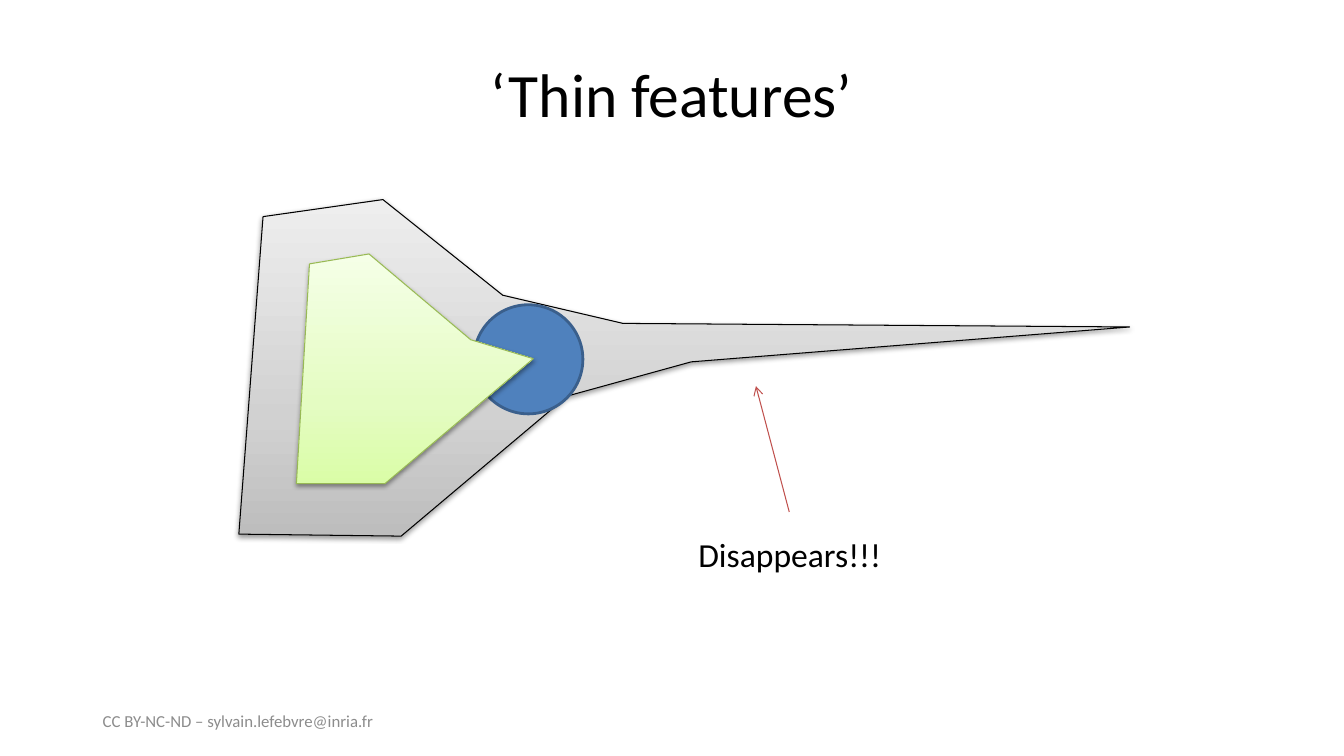
import pptx
import pptx.util
import pptx.dml.color
import pptx.enum.shapes
import pptx.enum.text
import pptx.oxml.ns
import lxml.etree

Cm = pptx.util.Cm
Pt = pptx.util.Pt
qn = pptx.oxml.ns.qn
ALIGN = pptx.enum.text.PP_ALIGN
ANCHOR = pptx.enum.text.MSO_ANCHOR

BODY = [(9.65, 5.03), (12.67, 7.44), (15.7, 8.15), (28.47, 8.24),
        (17.42, 9.12), (14.3, 9.98), (10.11, 13.51), (6.02, 13.46),
        (6.63, 5.46)]
CORE = [(9.3, 6.4), (7.8, 6.65), (7.47, 12.19), (9.7, 12.19),
        (13.44, 9.04), (11.86, 8.56)]


def color(code):
    return pptx.dml.color.RGBColor.from_string(code)


def add(node, tag, **attrs):
    return lxml.etree.SubElement(node, qn(tag), attrs)


def edge(shape, code, width):
    shape.line.color.rgb = color(code)
    shape.line.width = Pt(width)


def place(shape, left, top, width, height):
    shape.left, shape.top = Cm(left), Cm(top)
    shape.width, shape.height = Cm(width), Cm(height)


def write(shape, text, size, code, align, anchor):
    frame = shape.text_frame
    frame.text = text
    frame.vertical_anchor = anchor
    line = frame.paragraphs[0]
    line.alignment = align
    font = line.runs[0].font
    font.name = "Calibri"
    font.size = Pt(size)
    font.color.rgb = color(code)


def label(slide, text, box, size, code, anchor, wrap):
    shape = slide.shapes.add_textbox(*map(Cm, box))
    write(shape, text, size, code, ALIGN.LEFT, anchor)
    shape.text_frame.word_wrap = wrap


def blend(shape, stops):
    shape.fill.gradient()
    shape.fill.gradient_angle = 90
    group = shape._element.spPr.find(qn("a:gradFill")).find(qn("a:gsLst"))
    for old in list(group):
        group.remove(old)
    for part, code in zip((0, 35, 100), stops):
        stop = add(group, "a:gs", pos=str(part * 1000))
        add(stop, "a:srgbClr", val=code)


def shade(shape):
    shape.shadow.inherit = False
    effect = shape._element.spPr.find(qn("a:effectLst"))
    outer = add(effect, "a:outerShdw", blurRad="40000", dist="20000",
                dir="5400000", rotWithShape="0")
    tint = add(outer, "a:srgbClr", val="000000")
    add(tint, "a:alpha", val="38000")


def outline(slide, points, stops, code):
    spots = [(Cm(x), Cm(y)) for x, y in points]
    pen = slide.shapes.build_freeform(*spots[0])
    pen.add_line_segments(spots[1:], close=True)
    shape = pen.convert_to_shape()
    blend(shape, stops)
    edge(shape, code, 0.75)
    shade(shape)


def disc(slide, left, top, size):
    oval = pptx.enum.shapes.MSO_SHAPE.OVAL
    shape = slide.shapes.add_shape(oval, Cm(left), Cm(top), Cm(size), Cm(size))
    shape.shadow.inherit = False
    shape.fill.solid()
    shape.fill.fore_color.rgb = color("4F81BD")
    edge(shape, "3A5F8C", 2)


def arrow(slide, ends, code):
    kind = pptx.enum.shapes.MSO_CONNECTOR.STRAIGHT
    shape = slide.shapes.add_connector(kind, *map(Cm, ends))
    edge(shape, code, 0.75)
    add(shape.line._get_or_add_ln(), "a:tailEnd", type="arrow")
    add(shape._element.spPr, "a:effectLst")


def main():
    deck = pptx.Presentation()
    deck.slide_width, deck.slide_height = Cm(33.87), Cm(19.05)
    slide = deck.slides.add_slide(deck.slide_layouts[5])
    title = slide.shapes.title
    place(title, 1.69, 0.76, 30.48, 3.18)
    write(title, "‘Thin features’", 44, "000000", ALIGN.CENTER, ANCHOR.MIDDLE)
    outline(slide, BODY, ("BDBDBD", "D1D1D1", "EEEEEE"), "000000")
    disc(slide, 11.94, 7.68, 2.75)
    outline(slide, CORE, ("DAFDA7", "E4FCC2", "F5FFE7"), "98B955")
    arrow(slide, (19.89, 12.9, 19.05, 9.73), "C0504D")
    label(slide, "Disappears!!!", (17.35, 13.34, 5.18, 1.27), 24, "000000",
          ANCHOR.TOP, False)
    label(slide, "CC BY-NC-ND – sylvain.lefebvre@inria.fr",
          (2.34, 17.65, 7.62, 1.02), 12, "8C8C8C", ANCHOR.MIDDLE, True)
    deck.save("out.pptx")


if __name__ == "__main__":
    main()
